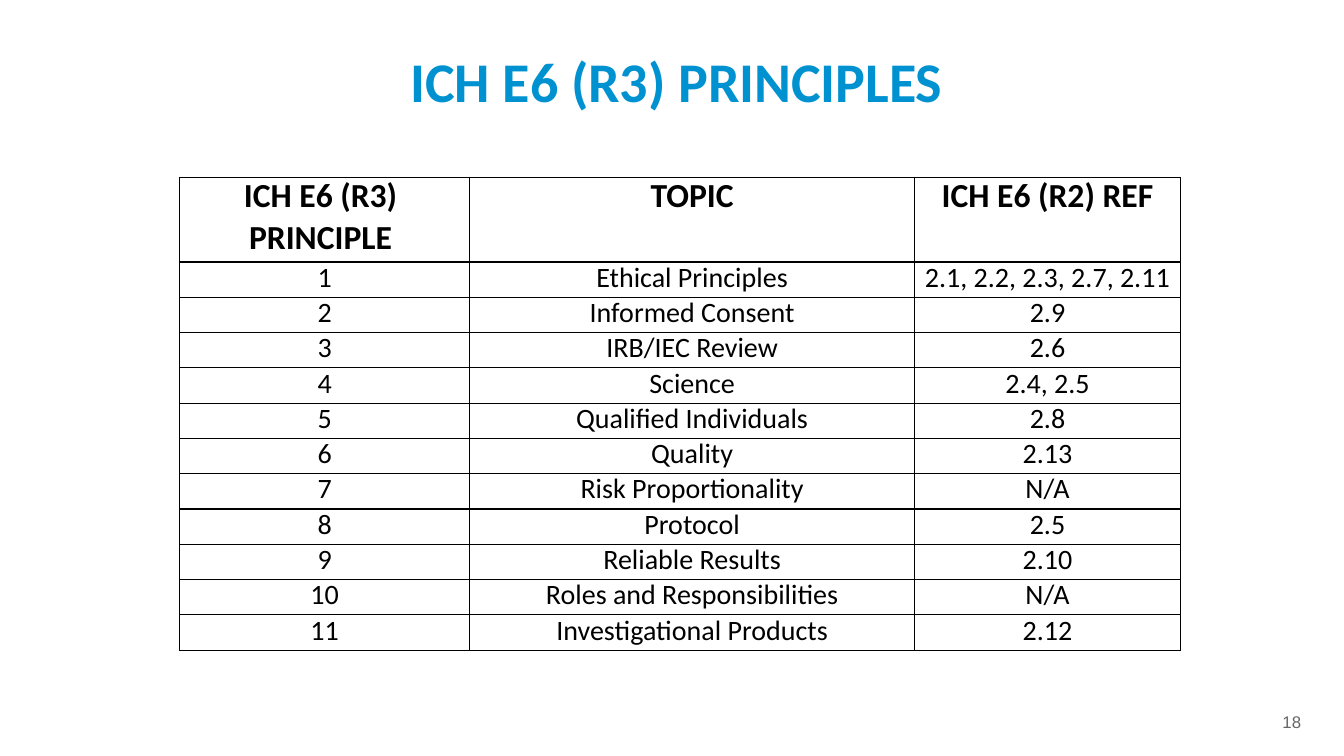
from lxml import etree
from pptx import Presentation
from pptx.dml.color import RGBColor
from pptx.enum.text import PP_ALIGN
from pptx.oxml.ns import qn
from pptx.util import Inches, Pt

LEFT, CENTER = PP_ALIGN.LEFT, PP_ALIGN.CENTER
W, H = 13.33, 7.5
COLUMNS = (2.88, 4.41, 2.64)
HEADER_HEIGHT, ROW_HEIGHT = 0.84, 0.35
HEADERS = ("ICH E6 (R3)\nPRINCIPLE", "TOPIC", "ICH E6 (R2) REF")
PRINCIPLES = (
    ("Ethical Principles", "2.1, 2.2, 2.3, 2.7, 2.11"),
    ("Informed Consent", "2.9"),
    ("IRB/IEC Review", "2.6"),
    ("Science", "2.4, 2.5"),
    ("Qualified Individuals", "2.8"),
    ("Quality", "2.13"),
    ("Risk Proportionality", "N/A"),
    ("Protocol", "2.5"),
    ("Reliable Results", "2.10"),
    ("Roles and Responsibilities", "N/A"),
    ("Investigational Products", "2.12"),
)


def color(value):
    return RGBColor.from_string(value)


def write(tf, text, size, fill, font="Calibri", bold=False, align=LEFT, line=None):
    tf.text = text
    for i, p in enumerate(tf.paragraphs):
        p.alignment = align
        p.font.name, p.font.size, p.font.bold = font, Pt(size), bold
        p.font.color.rgb = color(fill)
        if line:
            p.line_spacing = Pt(line)
        if i:
            p.space_before = Pt(1.9)


def add_text(s, box, text, size, fill, **style):
    tf = s.shapes.add_textbox(*map(Inches, box)).text_frame
    tf.word_wrap = True
    tf.margin_left = tf.margin_top = tf.margin_right = tf.margin_bottom = 0
    write(tf, text, size, fill, **style)


def add_borders(cell, fill, width):
    tcPr = cell._tc.get_or_add_tcPr()
    for i, side in enumerate(("a:lnL", "a:lnR", "a:lnT", "a:lnB")):
        ln = etree.Element(qn(side), w=str(Pt(width)))
        solid = etree.SubElement(ln, qn("a:solidFill"))
        etree.SubElement(solid, qn("a:srgbClr"), val=fill)
        tcPr.insert(i, ln)


def add_principles(s, left, top):
    rows = [HEADERS] + [(str(n), *row) for n, row in enumerate(PRINCIPLES, 1)]
    height = HEADER_HEIGHT + ROW_HEIGHT * len(PRINCIPLES)
    box = (left, top, sum(COLUMNS), height)
    table = s.shapes.add_table(len(rows), len(COLUMNS), *map(Inches, box)).table
    table.first_row = table.horz_banding = False
    for column, width in zip(table.columns, COLUMNS):
        column.width = Inches(width)
    for i, values in enumerate(rows):
        header = i == 0
        table.rows[i].height = Inches(HEADER_HEIGHT if header else ROW_HEIGHT)
        for cell, value in zip(table.rows[i].cells, values):
            cell.margin_left = cell.margin_top = cell.margin_right = cell.margin_bottom = 0
            cell.fill.background()
            write(cell.text_frame, value, 24 if header else 20, "000000",
                  bold=header, align=CENTER, line=28 if header else 23.4)
            add_borders(cell, "000000", 1)
    table.cell(0, 0).margin_right = Inches(0.08)


def main():
    prs = Presentation()
    prs.slide_width, prs.slide_height = Inches(W), Inches(H)
    s = prs.slides.add_slide(prs.slide_layouts[6])
    add_text(s, (4.07, 0.46, 7.58, 0.8), "ICH E6 (R3) PRINCIPLES", 40, "0092D0", bold=True)
    add_principles(s, 1.78, 1.76)
    add_text(s, (12.72, 7.06, 0.24, 0.21), "18", 12, "666666", font="Arial", line=14.2)
    prs.save("out.pptx")


if __name__ == "__main__":
    main()
